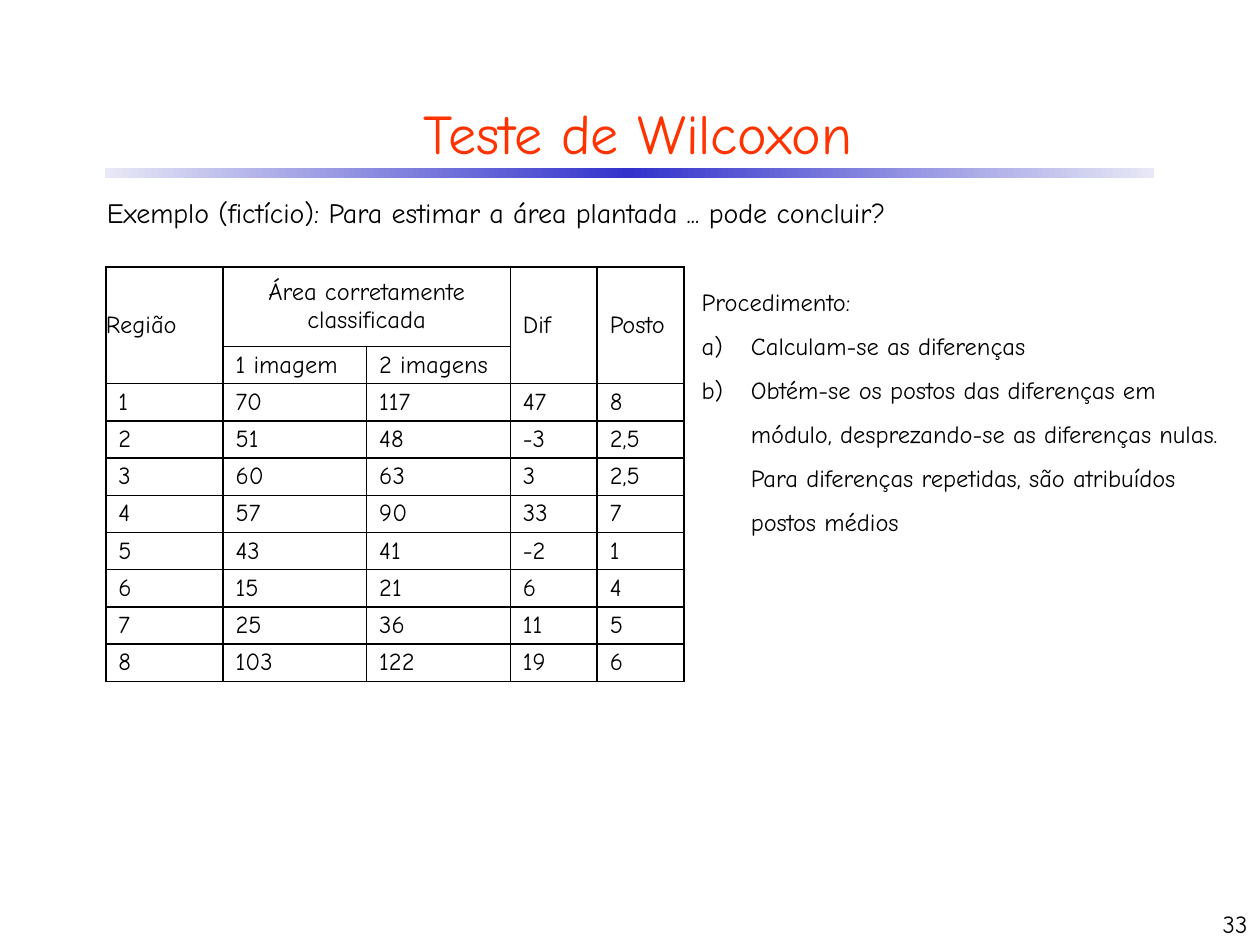
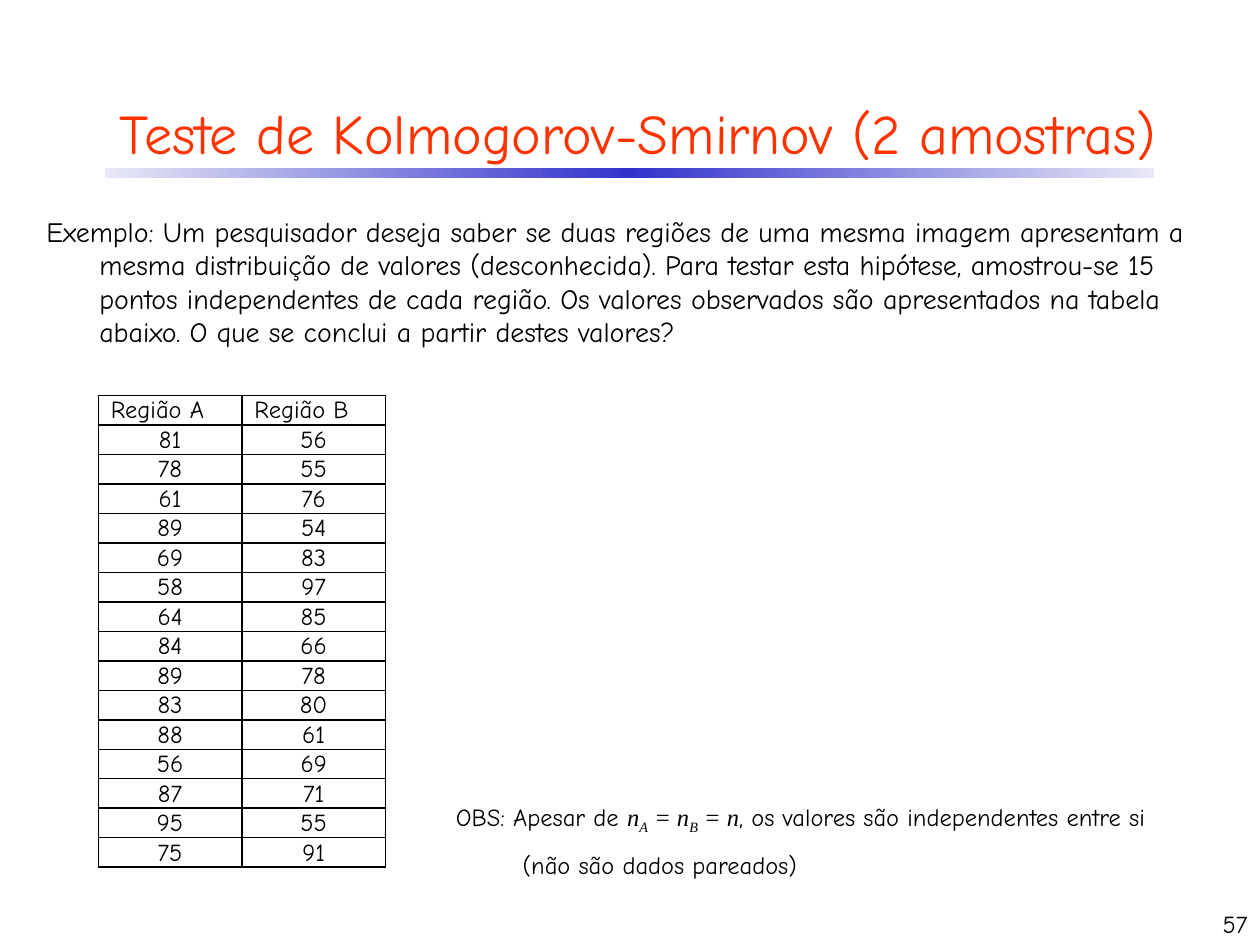
from copy import deepcopy

from lxml import etree
from pptx import Presentation
from pptx import util as u
from pptx.dml.color import RGBColor
from pptx.enum import shapes, text
from pptx.oxml import ns

LEFT, CENTER, RIGHT = text.PP_ALIGN.LEFT, text.PP_ALIGN.CENTER, text.PP_ALIGN.RIGHT
TOP, MIDDLE, BOTTOM = (text.MSO_ANCHOR.TOP, text.MSO_ANCHOR.MIDDLE,
                       text.MSO_ANCHOR.BOTTOM)
SYMBOL = {"name": "Times New Roman", "italic": True}
SUBSCRIPT = {**SYMBOL, "baseline": -25000}


def color(hex_value):
    return RGBColor.from_string(hex_value)


def apply(target, values):
    for name, value in values.items():
        setattr(target, name, value)


def box(*lengths):
    return [u.Inches(length) for length in lengths]


class Deck:
    FONT = "Comic Neue"
    INK, PAPER, TITLE = "000000", "FFFFFF", "FF3300"
    BAND_EDGE, BAND_CENTER = "E8E8F6", "3333CC"

    def __init__(self):
        self.prs = Presentation()
        self.prs.slide_width, self.prs.slide_height = box(10, 7.5)
        self.slide = None

    def start(self, title, number):
        """Add a slide with its title, gradient band and page number."""
        self.slide = self.prs.slides.add_slide(self.prs.slide_layouts[5])
        self.band()
        heading = self.slide.shapes.title
        apply(heading, dict(zip(("left", "top", "width", "height"),
                                box(0.33, 0.67, 9.47, 0.75))))
        apply(heading.text_frame, {"vertical_anchor": MIDDLE, "word_wrap": True,
                                   "auto_size": text.MSO_AUTO_SIZE.NONE})
        self.add_runs(heading.text_frame.paragraphs[0], title, 32, CENTER, self.TITLE)
        self.text((7.92, 7, 2.08, 0.5), [number], align=RIGHT, anchor=BOTTOM,
                  grow=False)

    def band(self):
        band = self.slide.shapes.add_shape(shapes.MSO_SHAPE.RECTANGLE,
                                           *box(0.83, 1.33, 8.33, 0.08))
        band.shadow.inherit = False
        band.line.fill.background()
        band.fill.gradient()
        band.fill.gradient_angle = 0
        stop_list = band.element.spPr.find(".//" + ns.qn("a:gsLst"))
        stop_list.insert(1, deepcopy(stop_list[0]))
        hues = (self.BAND_EDGE, self.BAND_CENTER, self.BAND_EDGE)
        for i, (stop, hue) in enumerate(zip(band.fill.gradient_stops, hues)):
            stop.color.rgb = color(hue)
            stop.position = i / 2

    def add_runs(self, paragraph, content, size=14, align=LEFT, ink=INK):
        """Fill a paragraph from a string or a list of (string, format) pairs."""
        paragraph.alignment = align
        runs = [(content, {})] if isinstance(content, str) else content
        for words, changes in runs:
            style = {"name": self.FONT, "size": u.Pt(size), "bold": False, **changes}
            baseline = style.pop("baseline", None)
            run = paragraph.add_run()
            run.text = words
            apply(run.font, style)
            run.font.color.rgb = color(ink)
            if baseline:
                run._r.get_or_add_rPr().set("baseline", str(baseline))

    def text(self, at, paragraphs, size=14, align=LEFT, anchor=TOP, hanging=0,
             spacing=1.0, lettered_from=None, grow=True):
        """Add a text box; paragraphs from index lettered_from get a), b)..."""
        frame = self.slide.shapes.add_textbox(*box(*at)).text_frame
        fit = text.MSO_AUTO_SIZE
        apply(frame, {"word_wrap": True, "vertical_anchor": anchor,
                      "auto_size": fit.SHAPE_TO_FIT_TEXT if grow else fit.NONE})
        for i, content in enumerate(paragraphs):
            paragraph = frame.add_paragraph() if i else frame.paragraphs[0]
            self.add_runs(paragraph, content, size, align)
            paragraph.line_spacing = spacing
            properties = paragraph._p.get_or_add_pPr()
            properties.set("marL", str(u.Inches(hanging)))
            properties.set("indent", str(-u.Inches(hanging)))
            if lettered_from is not None and i >= lettered_from:
                etree.SubElement(properties, ns.qn("a:buAutoNum"),
                                 type="alphaLcParenR")

    def table(self, at, rows, widths, heights, merges=(), cell_style=None):
        """Add a ruled table; cell_style(row, column) gives (align, anchor, inset)."""
        grid = self.slide.shapes.add_table(len(rows), len(widths), *box(*at)).table
        apply(grid, {"first_row": False, "horz_banding": False})
        for column, width in zip(grid.columns, widths):
            column.width = u.Inches(width)
        for row, height in zip(grid.rows, heights):
            row.height = u.Inches(height)
        for first, last in merges:
            grid.cell(*first).merge(grid.cell(*last))
        for r, values in enumerate(rows):
            for c, value in enumerate(values):
                cell = grid.cell(r, c)
                align, anchor, inset = cell_style(r, c)
                apply(cell, {"vertical_anchor": anchor, "margin_top": 0,
                             "margin_bottom": 0, "margin_left": u.Inches(inset),
                             "margin_right": u.Inches(inset)})
                self.rule(cell)
                cell.fill.solid()
                cell.fill.fore_color.rgb = color(self.PAPER)
                if value:
                    self.add_runs(cell.text_frame.paragraphs[0], value, align=align)

    def rule(self, cell):
        """Draw the four borders of a cell."""
        properties = cell._tc.get_or_add_tcPr()
        for side in ("lnL", "lnR", "lnT", "lnB"):
            line = etree.SubElement(properties, ns.qn("a:" + side), w=str(u.Pt(1)))
            fill = etree.SubElement(line, ns.qn("a:solidFill"))
            etree.SubElement(fill, ns.qn("a:srgbClr"), val=self.INK)


def wilcoxon(deck):
    deck.start("Teste de Wilcoxon", "33")
    deck.text((0.75, 1.5, 8.7, 0.37),
              ["Exemplo (fictício): Para estimar a área plantada ... pode concluir?"],
              size=16, hanging=0.21)
    one_image = (70, 51, 60, 57, 43, 15, 25, 103)
    two_images = (117, 48, 63, 90, 41, 21, 36, 122)
    ranks = ("8", "2,5", "2,5", "7", "1", "4", "5", "6")
    rows = [("Região", "Área corretamente classificada", "", "Dif", "Posto"),
            ("", "1 imagem", "2 imagens", "", "")]
    for region, (one, two, rank) in enumerate(zip(one_image, two_images, ranks), 1):
        rows.append((str(region), str(one), str(two), str(two - one), rank))

    def cell_style(row, column):
        return (CENTER if (row, column) == (0, 1) else LEFT, MIDDLE,
                0 if (row, column) == (0, 0) else 0.1)

    deck.table((0.84, 2.12, 4.59, 3.29), rows, (0.93, 1.14, 1.14, 0.69, 0.69),
               [0.63] + [(3.29 - 0.63) / 9] * 9,
               merges=[((0, 1), (0, 2))] + [((0, c), (1, c)) for c in (0, 3, 4)],
               cell_style=cell_style)
    deck.text((5.47, 2.11, 4.38, 2.22),
              ["Procedimento:",
               "Calculam-se as diferenças",
               "Obtém-se os postos das diferenças em módulo, desprezando-se as "
               "diferenças nulas. Para diferenças repetidas, são atribuídos "
               "postos médios"],
              hanging=0.39, spacing=1.5, lettered_from=1)


def kolmogorov_smirnov(deck):
    deck.start("Teste de Kolmogorov-Smirnov (2 amostras)", "57")
    deck.text((0.27, 1.65, 9.57, 1.18),
              ["Exemplo: Um pesquisador deseja saber se duas regiões de uma mesma "
               "imagem apresentam a mesma distribuição de valores (desconhecida). "
               "Para testar esta hipótese, amostrou-se 15 pontos independentes de "
               "cada região. Os valores observados são apresentados na tabela "
               "abaixo. O que se conclui a partir destes valores?"],
              size=16, hanging=0.42)
    region_a = (81, 78, 61, 89, 69, 58, 64, 84, 89, 83, 88, 56, 87, 95, 75)
    region_b = (56, 55, 76, 54, 83, 97, 85, 66, 78, 80, 61, 69, 71, 55, 91)
    rows = [("Região A", "Região B")]
    rows += [(str(a), str(b)) for a, b in zip(region_a, region_b)]

    def cell_style(row, column):
        return (CENTER, BOTTOM, 0) if row else (LEFT, MIDDLE, 0.1)

    deck.table((0.78, 3.14, 2.27, 3.73), rows, (1.14, 1.14),
               [3.73 / len(rows)] * len(rows), cell_style=cell_style)
    deck.text((3.52, 6.18, 6.02, 0.77),
              [[("OBS: Apesar de ", {}), ("n", SYMBOL), ("A", SUBSCRIPT),
                (" = n", SYMBOL), ("B", SUBSCRIPT), (" = n", SYMBOL),
                (", os valores são independentes entre si (não são dados pareados)",
                 {})]],
              hanging=0.53, spacing=1.5)


def main():
    deck = Deck()
    wilcoxon(deck)
    kolmogorov_smirnov(deck)
    deck.prs.save("out.pptx")


if __name__ == "__main__":
    main()
